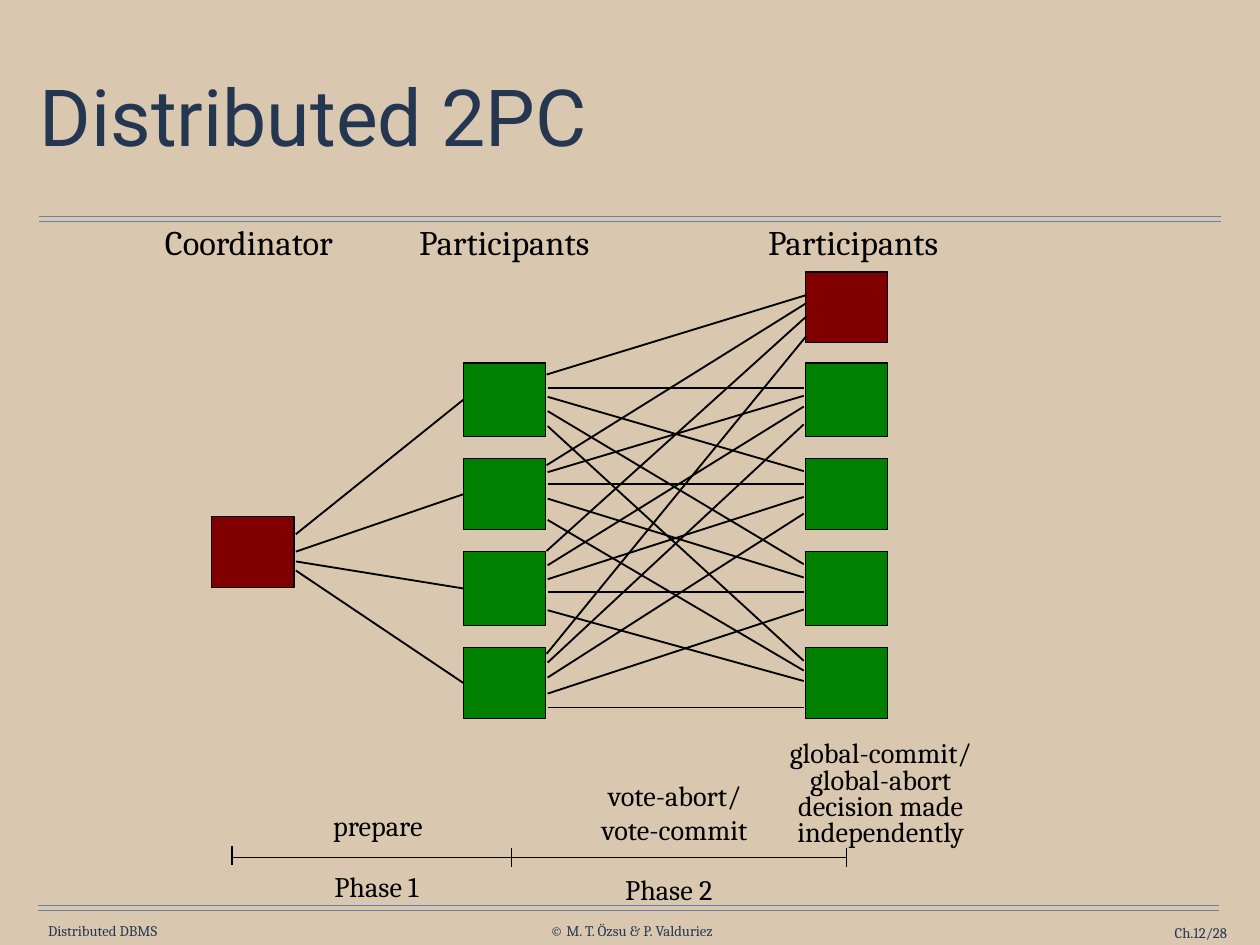
from dataclasses import dataclass

from lxml import etree
from pptx import Presentation
from pptx import util as u
from pptx.dml.color import RGBColor
from pptx.enum import shapes, text
from pptx.oxml import ns


@dataclass(frozen=True)
class Theme:
    sand: str = "D9C8AF"
    navy: str = "253750"
    rule: str = "6682AA"
    ink: str = "000000"
    red: str = "800000"
    green: str = "008000"
    heading_font: str = "Roboto"
    body_font: str = "Cambria"
    title_size: float = 64
    heading_size: float = 28
    label_size: float = 23
    footer_size: float = 12
    thin: float = 1
    message: float = 1.5


@dataclass(frozen=True)
class Label:
    lines: tuple[str, ...]
    left: float
    top: float
    width: float
    height: float
    size: float
    color: str
    inset: tuple[float, float] = (0.36, 0.18)
    align: text.PP_ALIGN = text.PP_ALIGN.CENTER
    anchor: text.MSO_ANCHOR = text.MSO_ANCHOR.TOP
    wrap: bool = False
    spacing: float | None = None


@dataclass(frozen=True)
class Site:
    left: float
    top: float
    height: float
    color: str


@dataclass(frozen=True)
class Votes:
    starts: tuple[float, ...]
    ends: tuple[float, ...]


THEME = Theme()
SITE_WIDTH = 2.36
PARTICIPANT_ROWS = ((10.41, 2.11), (13.16, 2.03), (15.82, 2.11), (18.57, 2.03))
PREPARE_STARTS = (15.32, 15.82, 16.1, 16.36)
COORDINATOR = Site(6.07, 14.81, 2.03, THEME.red)
COORDINATOR_AS_PARTICIPANT = Site(23.09, 7.8, 2.03, THEME.red)

VOTES = (
    Votes((10.74, 11.13, 11.38, 11.79, 12.22), (8.46, 11.13, 13.51, 16.18, 18.95)),
    Votes((13.34, 13.54, 13.87, 14.3, 14.91), (8.69, 11.35, 13.87, 16.56, 19.23)),
    Votes((15.8, 16.21, 16.61, 16.99, 17.5), (9.07, 11.66, 14.25, 16.99, 19.53)),
    Votes((18.75, 19.0, 19.43, 19.89, 20.29), (9.63, 12.17, 14.73, 17.48, 20.29)),
)


def heading(words: str, left: float, width: float) -> Label:
    return Label((words,), left, 6.15, width, 1.55, THEME.heading_size, THEME.ink)


def label(lines: tuple[str, ...], left: float, top: float, width: float,
          height: float = 1.35, spacing: float | None = None) -> Label:
    return Label(lines, left, top, width, height, THEME.label_size, THEME.ink,
                 spacing=spacing)


def footer(words: str, left: float, top: float, width: float,
           align: text.PP_ALIGN = text.PP_ALIGN.CENTER, wrap: bool = False) -> Label:
    return Label((words,), left, top, width, 0.51, THEME.footer_size, THEME.navy,
                 (0, 0), align, text.MSO_ANCHOR.MIDDLE, wrap)


LABELS = (
    footer("Distributed DBMS", 1.19, 26.44, 3.51),
    footer("© M. T. Özsu & P. Valduriez", 15.47, 26.44, 5.28),
    footer("Ch.12/28", 31.27, 26.49, 3.91, text.PP_ALIGN.RIGHT, True),
    heading("Coordinator", 4.06, 6.15),
    heading("Participants", 11.46, 5.99),
    heading("Participants", 21.46, 5.99),
    label(("prepare",), 9.07, 22.99, 3.53),
    label(("vote-abort/", "vote-commit"), 16.66, 22.15, 5.36, 2.31),
    label(("global-commit/", "global-abort", "decision made", "independently"),
          22.0, 21.13, 6.5, 3.4, 21.4),
    label(("Phase 1",), 9.07, 24.74, 3.45),
    label(("Phase 2",), 17.45, 24.82, 3.45),
)


def set_font(paragraph, name: str, size: float, color: str) -> None:
    paragraph.font.name = name
    paragraph.font.size = u.Pt(size)
    paragraph.font.color.rgb = RGBColor.from_string(color)


def add_label(slide, item: Label) -> None:
    box = slide.shapes.add_textbox(
        u.Cm(item.left), u.Cm(item.top), u.Cm(item.width), u.Cm(item.height))
    frame = box.text_frame
    frame.word_wrap = item.wrap
    frame.auto_size = text.MSO_AUTO_SIZE.SHAPE_TO_FIT_TEXT
    frame.vertical_anchor = item.anchor
    frame.margin_left = frame.margin_right = u.Cm(item.inset[0])
    frame.margin_top = frame.margin_bottom = u.Cm(item.inset[1])
    frame.text = "\n".join(item.lines)
    for paragraph in frame.paragraphs:
        paragraph.alignment = item.align
        if item.spacing:
            paragraph.line_spacing = u.Pt(item.spacing)
        set_font(paragraph, THEME.body_font, item.size, item.color)


def add_line(slide, start: tuple[float, float], end: tuple[float, float],
             color: str = THEME.ink, width: float = THEME.thin):
    line = slide.shapes.add_connector(
        shapes.MSO_CONNECTOR.STRAIGHT, *map(u.Cm, start + end))
    line.line.color.rgb = RGBColor.from_string(color)
    line.line.width = u.Pt(width)
    etree.SubElement(line._element.spPr, ns.qn("a:effectLst"))
    return line


def add_site(slide, site: Site):
    square = slide.shapes.add_shape(
        shapes.MSO_SHAPE.RECTANGLE,
        u.Cm(site.left), u.Cm(site.top), u.Cm(SITE_WIDTH), u.Cm(site.height))
    square.shadow.inherit = False
    square.fill.solid()
    square.fill.fore_color.rgb = RGBColor.from_string(site.color)
    square.line.color.rgb = RGBColor.from_string(THEME.ink)
    square.line.width = u.Pt(THEME.thin)
    return square


def add_title(slide, words: str) -> None:
    title = slide.shapes.title
    title.left, title.top = u.Cm(0.99), u.Cm(1.24)
    title.width, title.height = u.Cm(34.14), u.Cm(4.47)
    frame = title.text_frame
    frame.text = words
    frame.auto_size = text.MSO_AUTO_SIZE.NONE
    frame.vertical_anchor = text.MSO_ANCHOR.MIDDLE
    frame.margin_left = frame.margin_right = u.Cm(0.15)
    frame.margin_top = frame.margin_bottom = u.Cm(0.15)
    paragraph = frame.paragraphs[0]
    paragraph.alignment = text.PP_ALIGN.LEFT
    paragraph.line_spacing = 0.9
    set_font(paragraph, THEME.heading_font, THEME.title_size, THEME.navy)


def add_protocol(slide) -> None:
    add_site(slide, COORDINATOR)
    add_site(slide, COORDINATOR_AS_PARTICIPANT)
    for (top, height), prepare_start, votes in zip(PARTICIPANT_ROWS, PREPARE_STARTS, VOTES):
        voter = add_site(slide, Site(13.28, top, height, THEME.green))
        add_site(slide, Site(23.09, top, height, THEME.green))
        prepare = add_line(slide, (8.48, prepare_start), (13.28, top + height / 2),
                           width=THEME.message)
        prepare.end_connect(voter, 1)
        for receiver, (start, end) in enumerate(zip(votes.starts, votes.ends)):
            left, right = (15.7, 23.04) if receiver else (15.67, 23.12)
            add_line(slide, (left, start), (right, end), width=THEME.message)


def main() -> None:
    deck = Presentation()
    deck.slide_width, deck.slide_height = u.Cm(36.12), u.Cm(27.1)
    slide = deck.slides.add_slide(deck.slide_layouts[5])
    slide.background.fill.solid()
    slide.background.fill.fore_color.rgb = RGBColor.from_string(THEME.sand)
    add_title(slide, "Distributed 2PC")
    for left, right, top in ((1.12, 35.0, 6.2), (1.09, 34.95, 25.96)):
        for y in (top, top + 0.15):
            add_line(slide, (left, y), (right, y), THEME.rule)
    for item in LABELS:
        add_label(slide, item)
    add_line(slide, (6.65, 24.59), (24.26, 24.59))
    for x, top in ((6.65, 24.26), (14.66, 24.31), (24.26, 24.31)):
        add_line(slide, (x, top), (x, top + 0.56))
    add_protocol(slide)
    deck.save("out.pptx")


if __name__ == "__main__":
    main()
